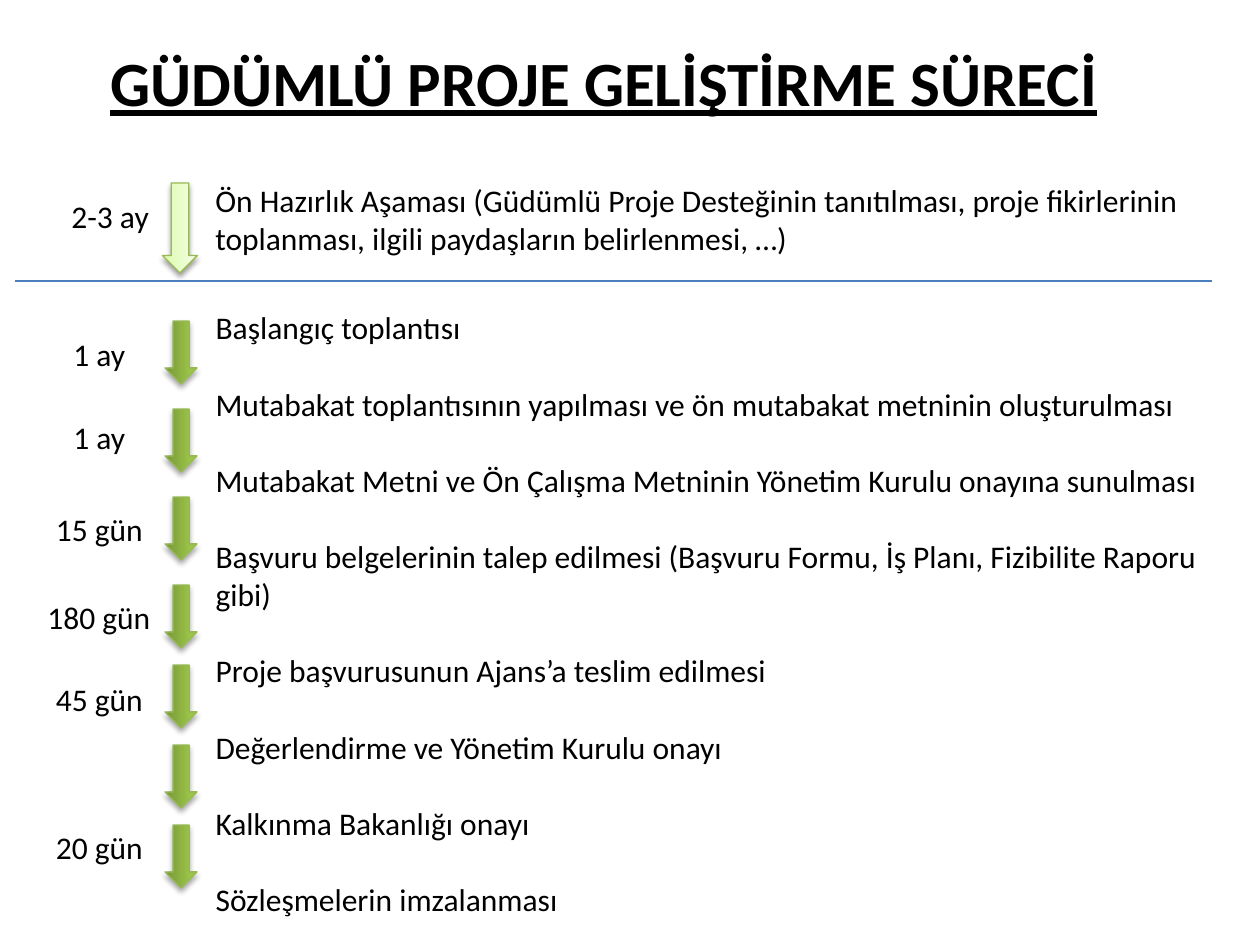
from lxml import etree
from pptx import Presentation
from pptx.dml.color import RGBColor
from pptx.enum.shapes import MSO_CONNECTOR, MSO_SHAPE
from pptx.enum.text import MSO_ANCHOR, MSO_AUTO_SIZE, PP_ALIGN
from pptx.oxml.ns import qn
from pptx.util import Pt

ARROW = MSO_SHAPE.RIGHT_ARROW
STRAIGHT = MSO_CONNECTOR.STRAIGHT
TOP = MSO_ANCHOR.TOP
NO_FIT = MSO_AUTO_SIZE.NONE
LEFT, CENTER = PP_ALIGN.LEFT, PP_ALIGN.CENTER

EMU_PER_PX = 914400 / 126
FONT = "Calibri"
COLORS = {"text": "000000", "outline": "98B955", "divider": "4B7EBC", "shadow": "000000"}
GREEN = [(0, "779737"), (80, "9BC348"), (100, "9DC746")]
PALE = [(0, "DAFDA7"), (35, "E4FCC2"), (100, "F5FFE7")]

PREPARATION = (
    "Ön Hazırlık Aşaması (Güdümlü Proje Desteğinin tanıtılması, proje fikirlerinin "
    "toplanması, ilgili paydaşların belirlenmesi, …)"
)
STEPS = [
    "Başlangıç toplantısı",
    "Mutabakat toplantısının yapılması ve ön mutabakat metninin oluşturulması",
    "Mutabakat Metni ve Ön Çalışma Metninin Yönetim Kurulu onayına sunulması",
    "Başvuru belgelerinin talep edilmesi (Başvuru Formu, İş Planı, Fizibilite Raporu gibi)",
    "Proje başvurusunun Ajans’a teslim edilmesi",
    "Değerlendirme ve Yönetim Kurulu onayı",
    "Kalkınma Bakanlığı onayı",
    "Sözleşmelerin imzalanması",
]
DURATIONS = [
    ("1 ay", 27, 78),
    ("1 ay", 110, 78),
    ("15 gün", 202, 113),
    ("180 gün", 290, 130),
    ("45 gün", 372, 113),
    ("20 gün", 520, 113),
]


def px(length):
    return round(length * EMU_PER_PX)


def place(shape, left, top, width, height):
    shape.left, shape.top = px(left), px(top)
    shape.width, shape.height = px(width), px(height)


def write(para, text, size=18, heading=False, align=LEFT):
    para.alignment = align
    span = para.add_run()
    span.text = text
    span.font.name = FONT
    span.font.size = Pt(size)
    span.font.color.rgb = RGBColor.from_string(COLORS["text"])
    if heading:
        span.font.bold = span.font.underline = True


def add_label(page, text, left, top, width, height, wrap=False):
    box = page.shapes.add_textbox(px(left), px(top), px(width), px(height))
    box.text_frame.word_wrap = wrap
    write(box.text_frame.paragraphs[0], text)


def add_down_arrow(page, center_x, top, length, breadth, stops, shadow_alpha):
    arrow = page.shapes.add_shape(
        ARROW, px(center_x - length / 2), px(top + (length - breadth) / 2), px(length), px(breadth)
    )
    arrow.rotation = 90
    arrow.line.color.rgb = RGBColor.from_string(COLORS["outline"])
    arrow.line.width = Pt(0.75)
    arrow.fill.gradient()
    arrow.fill.gradient_angle = 90
    properties = arrow.element.spPr
    stop_list = properties.find(qn("a:gradFill")).find(qn("a:gsLst"))
    for stop in list(stop_list):
        stop_list.remove(stop)
    for position, color in stops:
        stop = etree.SubElement(stop_list, qn("a:gs"), pos=str(position * 1000))
        etree.SubElement(stop, qn("a:srgbClr"), val=color)
    arrow.shadow.inherit = False
    shadow = etree.SubElement(
        properties.find(qn("a:effectLst")), qn("a:outerShdw"),
        blurRad=str(Pt(3.1)), dist=str(Pt(1.8)), dir="5400000", rotWithShape="0",
    )
    color = etree.SubElement(shadow, qn("a:srgbClr"), val=COLORS["shadow"])
    etree.SubElement(color, qn("a:alpha"), val=str(shadow_alpha * 1000))


def add_title(page, left, top, width, height):
    title = page.shapes.title
    place(title, left, top, width, height)
    title.text_frame.vertical_anchor = TOP
    title.text_frame.auto_size = NO_FIT
    write(title.text_frame.paragraphs[0], "GÜDÜMLÜ PROJE GELİŞTİRME SÜRECİ", 36, True, CENTER)


def add_preparation(page, left, top):
    add_label(page, "2-3 ay", left + 44, top + 16, 104, 50)
    add_down_arrow(page, left + 165, top + 8, 90, 35, PALE, 38)
    add_label(page, PREPARATION, left + 188, top, 1048, 89, wrap=True)


def add_divider(page, left, top, width):
    line = page.shapes.add_connector(STRAIGHT, px(left), px(top), px(left + width), px(top))
    line.line.color.rgb = RGBColor.from_string(COLORS["divider"])
    line.line.width = Pt(0.75)
    etree.SubElement(line.element.spPr, qn("a:effectLst"))


def add_steps(page, left, top, width, height):
    body = page.placeholders[1]
    place(body, left + 188, top, width - 188, height)
    frame = body.text_frame
    frame.auto_size = NO_FIT
    for index, step in enumerate(STEPS):
        para = frame.paragraphs[0] if index == 0 else frame.add_paragraph()
        para.space_before = Pt(22 if index else 0)
        properties = para._p.get_or_add_pPr()
        properties.set("marL", "0")
        properties.set("indent", "0")
        etree.SubElement(properties, qn("a:buNone"))
        write(para, step)

    for index in range(len(STEPS) - 1):
        offset = 19 + 88 * min(index, 3) + 80 * max(index - 3, 0)
        add_down_arrow(page, left + 166, top + offset, 63, 32, GREEN, 35)
    for text, offset, label_width in DURATIONS:
        add_label(page, text, left + 85 - label_width / 2, top + offset, label_width, 50)


def main():
    deck = Presentation()
    deck.slide_width, deck.slide_height = px(1260), px(945)
    page = deck.slides.add_slide(deck.slide_layouts[1])
    add_title(page, 74, 37, 1060, 120)
    add_preparation(page, 15, 175)
    add_divider(page, 15, 281, 1197)
    add_steps(page, 15, 302, 1233, 619)
    deck.save("out.pptx")


if __name__ == "__main__":
    main()
